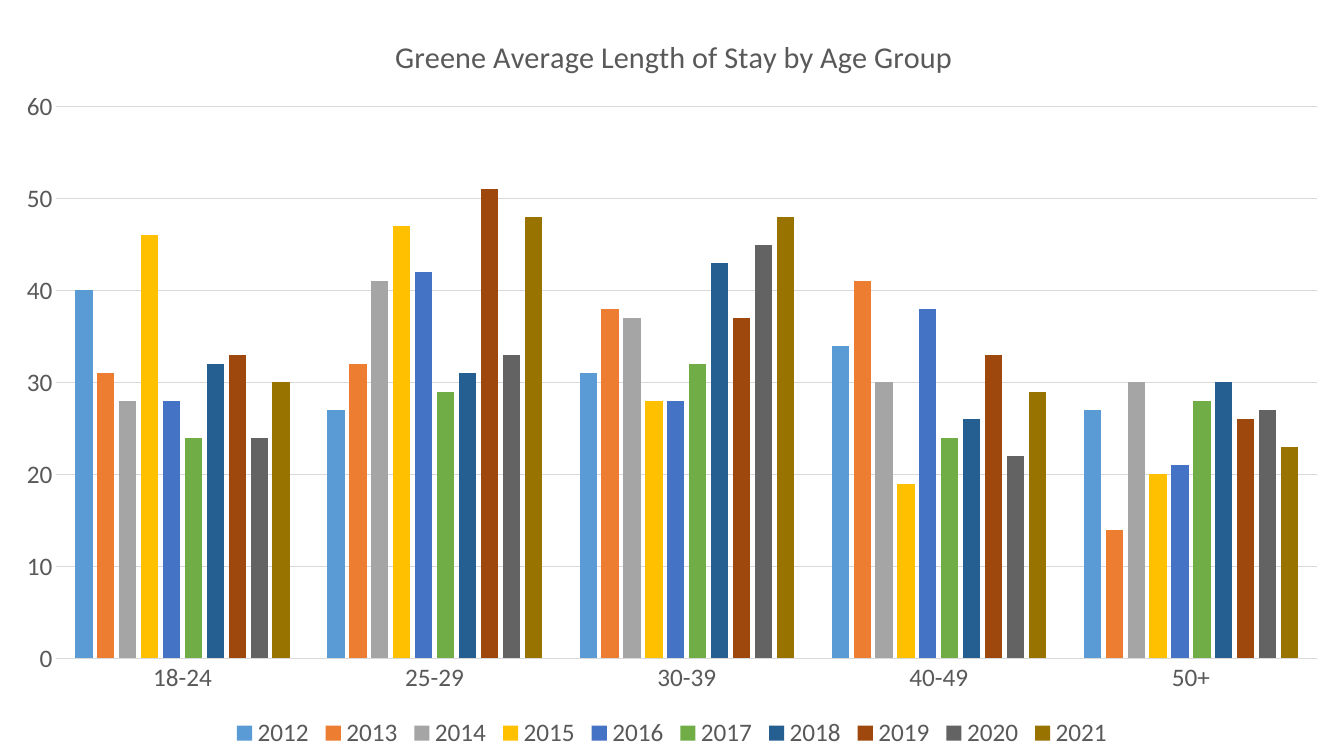
from lxml import etree
from pptx import Presentation
from pptx.chart.data import CategoryChartData
from pptx.dml.color import RGBColor
from pptx.enum.chart import XL_CHART_TYPE, XL_LEGEND_POSITION, XL_TICK_MARK
from pptx.oxml.ns import qn
from pptx.util import Inches, Pt

CLUSTERED = XL_CHART_TYPE.COLUMN_CLUSTERED
BOTTOM = XL_LEGEND_POSITION.BOTTOM
NO_TICK = XL_TICK_MARK.NONE

TITLE = "Greene Average Length of Stay by Age Group"
AGE_GROUPS = ["18-24", "25-29", "30-39", "40-49", "50+"]
# year: (bar colour, average stay per age group)
STAYS = {
    "2012": (RGBColor(0x5B, 0x9B, 0xD5), (40, 27, 31, 34, 27)),
    "2013": (RGBColor(0xED, 0x7D, 0x31), (31, 32, 38, 41, 14)),
    "2014": (RGBColor(0xA5, 0xA5, 0xA5), (28, 41, 37, 30, 30)),
    "2015": (RGBColor(0xFF, 0xC0, 0x00), (46, 47, 28, 19, 20)),
    "2016": (RGBColor(0x44, 0x72, 0xC4), (28, 42, 28, 38, 21)),
    "2017": (RGBColor(0x70, 0xAD, 0x47), (24, 29, 32, 24, 28)),
    "2018": (RGBColor(0x25, 0x5E, 0x91), (32, 31, 43, 26, 30)),
    "2019": (RGBColor(0x9E, 0x48, 0x0E), (33, 51, 37, 33, 26)),
    "2020": (RGBColor(0x63, 0x63, 0x63), (24, 33, 45, 22, 27)),
    "2021": (RGBColor(0x99, 0x73, 0x00), (30, 48, 48, 29, 23)),
}
TEXT_GREY = RGBColor(0x59, 0x59, 0x59)
LINE_GREY = RGBColor(0xD9, 0xD9, 0xD9)
FONT = "Calibri"


def style_font(font, size):
    font.name = FONT
    font.size = Pt(size)
    font.bold = False
    font.color.rgb = TEXT_GREY


def style_line(line):
    line.color.rgb = LINE_GREY
    line.width = Pt(0.75)


def place(part, index, **fractions):
    """Fix a chart part's place, in fractions of the chart area."""
    for old in part.findall(qn("c:layout")):
        part.remove(old)
    layout = etree.Element(qn("c:layout"))
    manual = etree.SubElement(layout, qn("c:manualLayout"))
    if part.tag == qn("c:plotArea"):
        etree.SubElement(manual, qn("c:layoutTarget")).set("val", "inner")
    for mode in ("xMode", "yMode"):
        etree.SubElement(manual, qn("c:" + mode)).set("val", "edge")
    for key, value in fractions.items():
        etree.SubElement(manual, qn("c:" + key)).set("val", str(value))
    part.insert(index, layout)


def add_stay_chart(slide, width, height):
    data = CategoryChartData(number_format="0")
    data.categories = AGE_GROUPS
    for year, (_, stays) in STAYS.items():
        data.add_series(year, stays)
    chart = slide.shapes.add_chart(CLUSTERED, 0, 0, width, height, data).chart
    style_font(chart.font, 18)

    chart.has_title = True
    title = chart.chart_title
    title.include_in_layout = False
    heading = title.text_frame.paragraphs[0].add_run()
    heading.text = TITLE
    style_font(heading.font, 21.6)

    bars = chart.plots[0]
    bars.gap_width = 219
    bars.overlap = -27
    bars.vary_by_categories = False
    for series, (colour, _) in zip(bars.series, STAYS.values()):
        series.format.fill.solid()
        series.format.fill.fore_color.rgb = colour
        series.invert_if_negative = False

    ages, days = chart.category_axis, chart.value_axis
    for axis in (ages, days):
        axis.major_tick_mark = axis.minor_tick_mark = NO_TICK
        style_font(axis.tick_labels.font, 18)
    style_line(ages.format.line)
    days.format.line.fill.background()
    days.minimum_scale, days.maximum_scale, days.major_unit = 0, 60, 10
    days.has_major_gridlines = True
    style_line(days.major_gridlines.format.line)

    chart.has_legend = True
    legend = chart.legend
    legend.position = BOTTOM
    legend.include_in_layout = False
    style_font(legend.font, 18)

    plot_area = chart.element.find(".//" + qn("c:plotArea"))
    place(plot_area, 0, x=0.042, y=0.141, w=0.938, h=0.73)
    place(chart.element.find(".//" + qn("c:title")), 1, x=0.29, y=0.04)
    place(chart.element.find(".//" + qn("c:legend")), 1,
          x=0.17, y=0.95, w=0.66, h=0.05)


def main():
    deck = Presentation()
    deck.slide_width, deck.slide_height = Inches(13.33), Inches(7.5)
    slide = deck.slides.add_slide(deck.slide_layouts[6])
    add_stay_chart(slide, deck.slide_width, deck.slide_height)
    deck.save("out.pptx")


if __name__ == "__main__":
    main()
